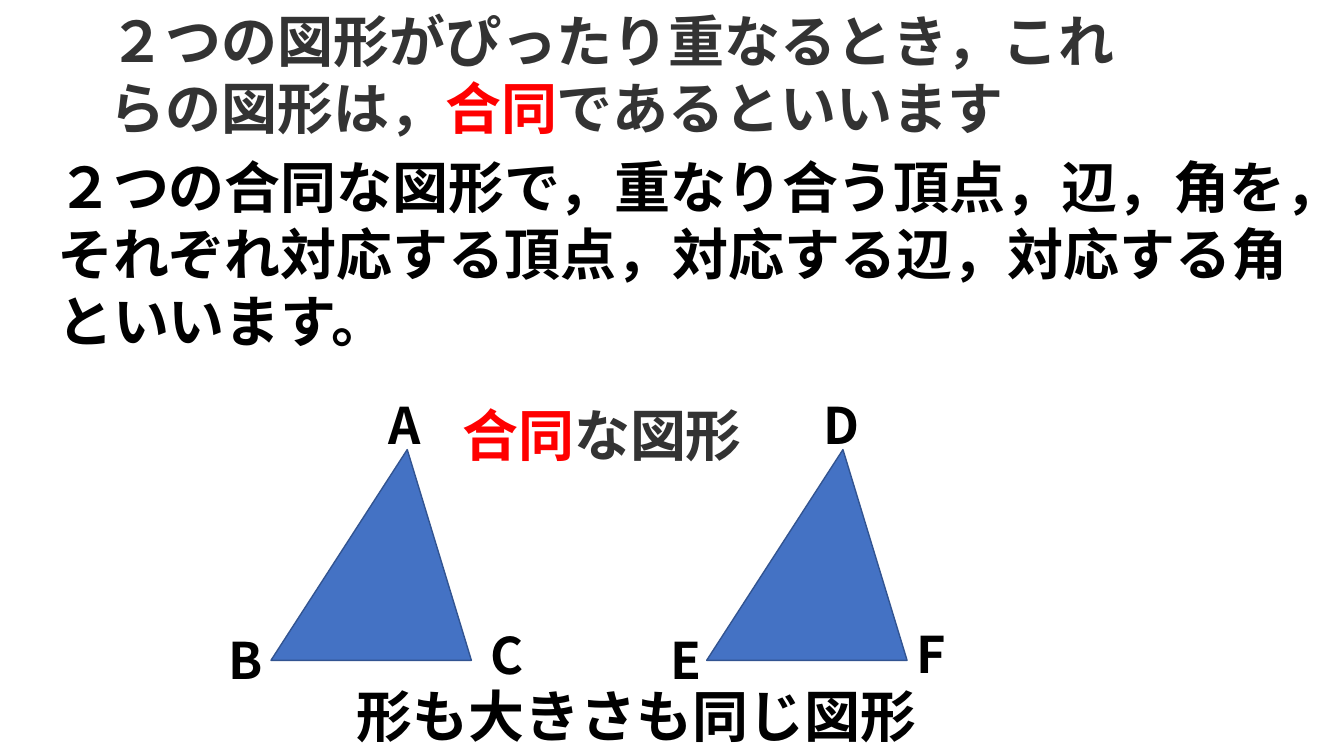
from lxml.etree import SubElement
from pptx import Presentation
from pptx.dml.color import RGBColor
from pptx.enum.shapes import MSO_SHAPE as Shape
from pptx.enum.text import MSO_AUTO_SIZE as AutoSize
from pptx.oxml.ns import qn
from pptx.util import Cm, Pt

BLACK, GRAY, RED = "000000", "333333", "FF0000"
BLUE, DARK_BLUE = "4472C4", "325491"


def color(value):
    return RGBColor.from_string(value)


class Lesson:
    font = "Noto Sans CJK JP"
    line_height = 1.2

    def __init__(self, presentation):
        self.slide = presentation.slides.add_slide(presentation.slide_layouts[6])

    def text(self, left, top, width, height, parts, size=40):
        box = self.slide.shapes.add_textbox(Cm(left), Cm(top), Cm(width), Cm(height))
        frame = box.text_frame
        frame.word_wrap = True
        frame.auto_size = AutoSize.SHAPE_TO_FIT_TEXT
        paragraph = frame.paragraphs[0]
        paragraph.line_spacing = Pt(size * self.line_height)
        for words, shade in parts:
            run = paragraph.add_run()
            run.text = words
            run.font.size = Pt(size)
            run.font.bold = True
            run.font.color.rgb = color(shade)
            run.font.name = self.font
            east_asian = SubElement(run.font._element, qn("a:ea"))
            east_asian.set("typeface", self.font)

    def vertex(self, name, left, top, width):
        self.text(left, top, width, 1.8, [(name, BLACK)], size=36)

    def triangle(self, left, top, width, height):
        shape = self.slide.shapes.add_shape(
            Shape.ISOSCELES_TRIANGLE, Cm(left), Cm(top), Cm(width), Cm(height))
        shape.adjustments[0] = 0.68
        shape.shadow.inherit = False
        shape.fill.solid()
        shape.fill.fore_color.rgb = color(BLUE)
        shape.line.color.rgb = color(DARK_BLUE)
        shape.line.width = Pt(1)


def main():
    presentation = Presentation()
    presentation.slide_width = Cm(33.87)
    presentation.slide_height = Cm(19.05)
    lesson = Lesson(presentation)

    lesson.text(2.51, 0.03, 26.59, 3.68, [
        ("２つの図形がぴったり重なるとき，これらの図形は，", GRAY),
        ("合同", RED),
        ("であるといいます", GRAY),
    ])
    for left in (6.83, 17.81):
        lesson.triangle(left, 11.33, 5.05, 5.31)
    for name, left, top, width in (
        ("A", 9.55, 9.8, 1.4),
        ("B", 5.51, 15.72, 1.42),
        ("C", 12.12, 15.6, 1.42),
        ("D", 20.5, 9.8, 1.5),
        ("E", 16.64, 15.72, 1.35),
        ("F", 22.86, 15.57, 1.32),
    ):
        lesson.vertex(name, left, top, width)
    lesson.text(11.4, 9.98, 8.1, 1.95, [("合同", RED), ("な図形", GRAY)])
    lesson.text(1.19, 3.71, 32.05, 5.38, [
        ("２つの合同な図形で，重なり合う頂点，辺，角を，"
         "それぞれ対応する頂点，対応する辺，対応する角といいます。", BLACK),
    ])
    lesson.text(8.74, 17.05, 18.14, 1.95, [("形も大きさも同じ図形", BLACK)])

    presentation.save("out.pptx")


if __name__ == "__main__":
    main()
